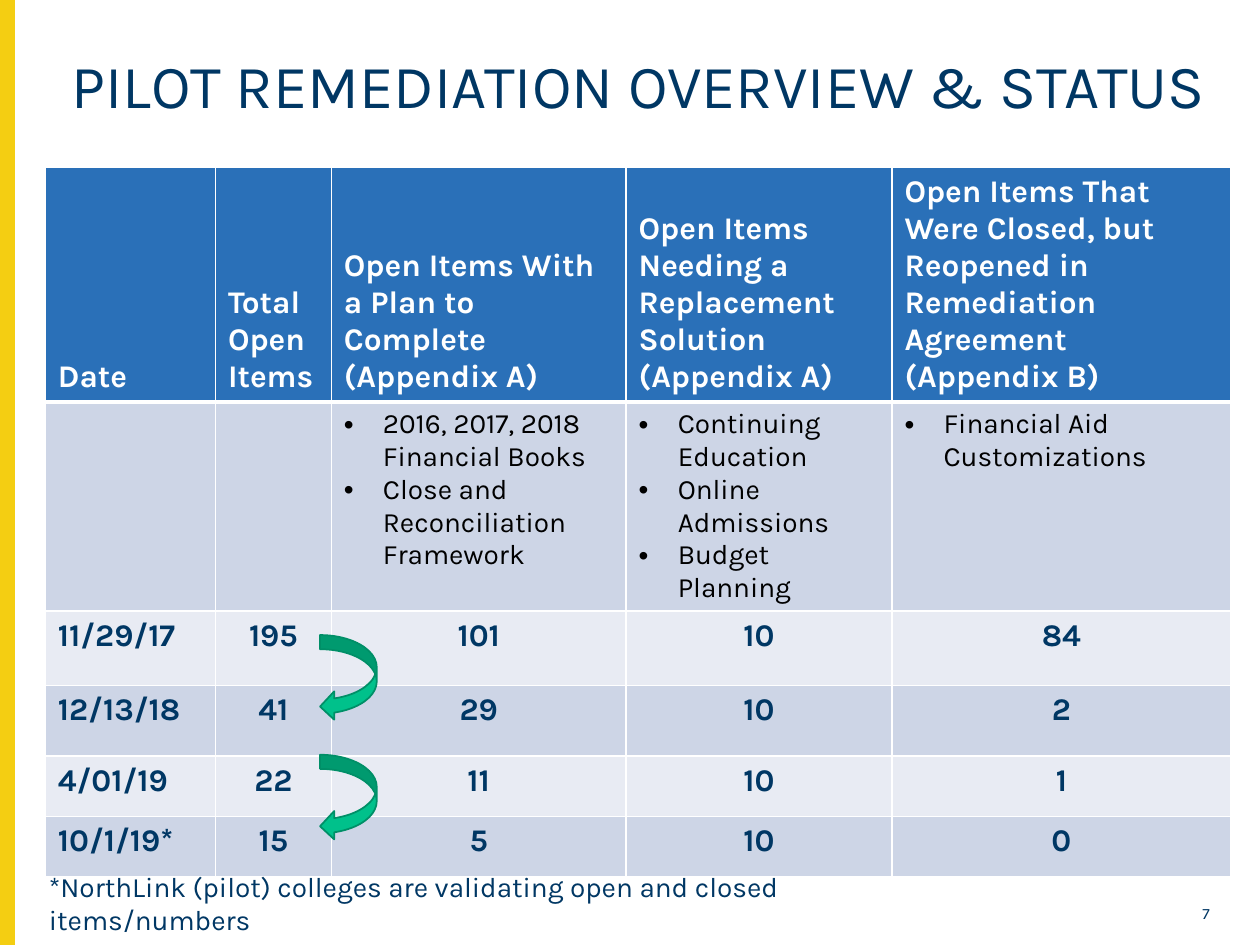
from lxml import etree
from pptx import Presentation
from pptx.dml.color import RGBColor
from pptx.enum.shapes import MSO_SHAPE
from pptx.enum.text import MSO_ANCHOR, MSO_AUTO_SIZE, PP_ALIGN
from pptx.oxml.ns import qn
from pptx.util import Emu, Inches, Pt

RECTANGLE, CURVED_ARROW = MSO_SHAPE.RECTANGLE, MSO_SHAPE.CURVED_LEFT_ARROW
TOP, MIDDLE, BOTTOM = MSO_ANCHOR.TOP, MSO_ANCHOR.MIDDLE, MSO_ANCHOR.BOTTOM
LEFT, CENTER, RIGHT = PP_ALIGN.LEFT, PP_ALIGN.CENTER, PP_ALIGN.RIGHT
NO_AUTOFIT = MSO_AUTO_SIZE.NONE

FONT = "Karla"
COLORS = {
    "navy": "003764", "yellow": "F4CE12", "header": "2A70B8",
    "dark_band": "CDD5E6", "light_band": "E8EBF3", "white": "FFFFFF",
    "black": "000000", "green": "00C18B", "green_edge": "008F67",
}
COLUMN_WIDTHS = [1.35, 0.92, 2.34, 2.11, 2.69]
ROW_HEIGHTS = [1.84, 1.64, 0.59, 0.56, 0.48, 0.48]
HEADERS = [
    ["Date"],
    ["Total Open Items"],
    ["Open Items With a Plan to Complete", "(Appendix A)"],
    ["Open Items Needing a Replacement Solution \v(Appendix A)"],
    ["Open Items That Were Closed, but Reopened in Remediation Agreement",
     "(Appendix B)"],
]
TOPICS = [
    [],
    [],
    ["2016, 2017, 2018 Financial Books", "Close and Reconciliation Framework"],
    ["Continuing Education", "Online Admissions", "Budget Planning"],
    ["Financial Aid Customizations"],
]
COUNTS = [
    ("11/29/17", 195, 101, 10, 84),
    ("12/13/18", 41, 29, 10, 2),
    ("4/01/19", 22, 11, 10, 1),
    ("10/1/19*", 15, 5, 10, 0),
]


def color(name):
    """Return the named palette colour."""
    return RGBColor.from_string(COLORS[name])


def inches(box):
    """Turn a box in inches into slide lengths."""
    return [Inches(length) for length in box]


def write(frame, lines, size, ink="navy", bold=False, align=LEFT):
    """Write lines as paragraphs of one style."""
    for index, line in enumerate(lines):
        paragraph = frame.add_paragraph() if index else frame.paragraphs[0]
        paragraph.text = line
        paragraph.alignment = align
        font = paragraph.font
        font.name, font.size, font.bold = FONT, Pt(size), bold
        font.color.rgb = color(ink)


def add_bullets(frame):
    """Give every paragraph a hanging bullet."""
    for paragraph in frame.paragraphs:
        properties = paragraph._p.get_or_add_pPr()
        properties.set("marL", str(Inches(0.31)))
        properties.set("indent", str(-Inches(0.31)))
        face = etree.Element(qn("a:buFont"), typeface="Arial")
        mark = etree.Element(qn("a:buChar"), char="•")
        properties.insert_element_before(face, "a:defRPr")
        properties.insert_element_before(mark, "a:defRPr")


def add_borders(cell, bottom_width):
    """Draw white borders ahead of the cell's fill."""
    properties = cell._tc.get_or_add_tcPr()
    widths = {"a:lnL": 1, "a:lnR": 1, "a:lnT": 1, "a:lnB": bottom_width}
    for position, (side, width) in enumerate(widths.items()):
        edge = etree.Element(qn(side), w=str(Pt(width)))
        fill = etree.SubElement(edge, qn("a:solidFill"))
        etree.SubElement(fill, qn("a:srgbClr"), val=COLORS["white"])
        properties.insert(position, edge)


def add_solid(slide, kind, box, fill, edge):
    """Add a filled preset shape with a thin outline."""
    shape = slide.shapes.add_shape(kind, *inches(box))
    shape.shadow.inherit = False
    shape.fill.solid()
    shape.fill.fore_color.rgb = color(fill)
    shape.line.color.rgb = color(edge)
    shape.line.width = Pt(1)


def add_title(slide, box):
    """Place and style the slide title."""
    title = slide.shapes.title
    title.left, title.top, title.width, title.height = inches(box)
    frame = title.text_frame
    frame.auto_size, frame.vertical_anchor = NO_AUTOFIT, MIDDLE
    write(frame, ["PILOT REMEDIATION OVERVIEW & STATUS"], 35, align=CENTER)
    frame.paragraphs[0].line_spacing = 0.9


def fill_cell(cell, row, column):
    """Fill and write one cell according to its row."""
    cell.fill.solid()
    if row == 0:
        cell.fill.fore_color.rgb = color("header")
        cell.vertical_anchor = BOTTOM
        write(cell.text_frame, HEADERS[column], 18, "white", True)
    elif row == 1:
        cell.fill.fore_color.rgb = color("dark_band")
        write(cell.text_frame, TOPICS[column], 16, "black")
        if TOPICS[column]:
            add_bullets(cell.text_frame)
    else:
        band = "dark_band" if row % 2 else "light_band"
        cell.fill.fore_color.rgb = color(band)
        write(cell.text_frame, [str(COUNTS[row - 2][column])], 18, bold=True,
              align=CENTER if column else LEFT)
    add_borders(cell, 1 if row else 3)


def add_status_table(slide, box):
    """Build the status table, scaling its grid to the box."""
    table = slide.shapes.add_table(
        len(ROW_HEIGHTS), len(COLUMN_WIDTHS), *inches(box)).table
    for column, share in zip(table.columns, COLUMN_WIDTHS):
        column.width = Inches(box[2] * share / sum(COLUMN_WIDTHS))
    for row, share in zip(table.rows, ROW_HEIGHTS):
        row.height = Inches(box[3] * share / sum(ROW_HEIGHTS))
    for row in range(len(ROW_HEIGHTS)):
        for column in range(len(COLUMN_WIDTHS)):
            fill_cell(table.cell(row, column), row, column)


def add_progress_arrows(slide, table_box):
    """Link successive totals beside the second column's right edge."""
    left = table_box[0] + sum(COLUMN_WIDTHS[:2]) - 0.09
    for row, drop in ((2, 0.2), (4, 0)):
        top = table_box[1] + sum(ROW_HEIGHTS[:row]) + drop
        add_solid(slide, CURVED_ARROW, (left, top + 0.03, 0.45, 0.68),
                  "green", "green_edge")


def add_note(slide, box, text, size, align=LEFT, anchor=TOP):
    """Add a wrapped note."""
    frame = slide.shapes.add_textbox(*inches(box)).text_frame
    frame.word_wrap, frame.vertical_anchor = True, anchor
    write(frame, [text], size, align=align)


def main():
    """Build and save the slide."""
    deck = Presentation()
    deck.slide_width, deck.slide_height = Emu(Inches(10)), Emu(Inches(7.5))
    slide = deck.slides.add_slide(deck.slide_layouts[5])
    table_box = (0.36, 1.33, sum(COLUMN_WIDTHS), sum(ROW_HEIGHTS))
    add_solid(slide, RECTANGLE, (0, 0, 0.11, 7.5), "yellow", "yellow")
    add_title(slide, (0.29, 0.43, 9.56, 0.54))
    add_status_table(slide, table_box)
    add_progress_arrows(slide, table_box)
    add_note(slide, (0.29, 6.85, 7.47, 0.62),
             "*NorthLink (pilot) colleges are validating open and closed "
             "items/numbers", 16)
    add_note(slide, (9.2, 7.14, 0.5, 0.21), "7", 9, RIGHT, MIDDLE)
    deck.save("out.pptx")


if __name__ == "__main__":
    main()
